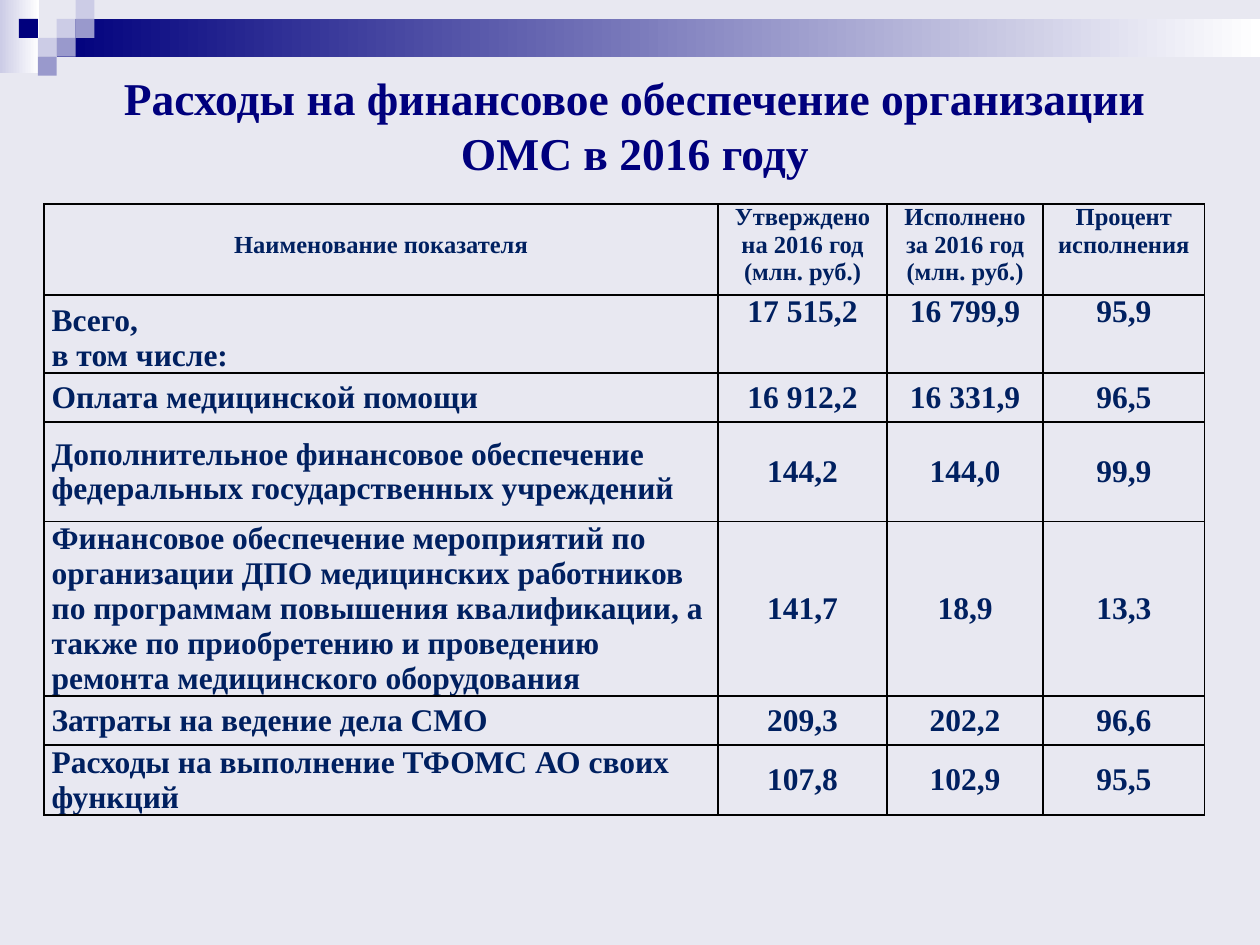
from lxml.etree import SubElement
from pptx import Presentation
from pptx.dml.color import RGBColor
from pptx.enum.shapes import MSO_SHAPE as Shape
from pptx.enum.text import MSO_ANCHOR as Anchor, PP_ALIGN as Align
from pptx.oxml.ns import qn
from pptx.util import Inches, Pt

COLORS = {
    "background": "E8E8F1", "navy": "00007D", "lilac": "CCCCE6", "violet": "9999CC",
    "white": "FFFFFF", "text": "002060", "border": "000000",
}
FONT = "Times New Roman"
TILE = 0.15
# Colour, column and row of each tile in the corner mosaic
TILES = [
    ("lilac", 3, 1), ("lilac", 4, 0), ("violet", 4, 1), ("lilac", 2, 2),
    ("navy", 1, 1), ("violet", 3, 2), ("violet", 2, 3),
]
COLUMN_WIDTHS = [5.35, 1.34, 1.24, 1.28]
ROW_HEIGHTS = [0.72, 0.62, 0.39, 0.79, 1.38, 0.39, 0.55]
ROWS = [
    ["Наименование показателя", "Утверждено\nна 2016 год\n(млн. руб.)",
     "Исполнено\nза 2016 год\n(млн. руб.)", "Процент исполнения"],
    ["Всего,\nв том числе:", "17 515,2", "16 799,9", "95,9"],
    ["Оплата медицинской помощи", "16 912,2", "16 331,9", "96,5"],
    ["Дополнительное финансовое обеспечение федеральных государственных учреждений",
     "144,2", "144,0", "99,9"],
    ["Финансовое обеспечение мероприятий по организации ДПО медицинских работников "
     "по программам повышения квалификации, а также по приобретению и проведению "
     "ремонта медицинского оборудования", "141,7", "18,9", "13,3"],
    ["Затраты на ведение дела СМО", "209,3", "202,2", "96,6"],
    ["Расходы на выполнение ТФОМС АО своих функций", "107,8", "102,9", "95,5"],
]


def rgb(name):
    return RGBColor.from_string(COLORS[name])


class PageBuilder:
    """Holds the text style and the page being built."""

    def __init__(self, page):
        self.page = page
        fill = page.background.fill
        fill.solid()
        fill.fore_color.rgb = rgb("background")

    def style(self, frame, size, color, align):
        for para in frame.paragraphs:
            para.alignment = align
            for span in para.runs:
                span.font.name = FONT
                span.font.size = Pt(size)
                span.font.bold = True
                span.font.color.rgb = rgb(color)

    def box(self, left, top, width, height, *colors):
        """Add a borderless rectangle: one colour is solid, two make a gradient."""
        box = self.page.shapes.add_shape(
            Shape.RECTANGLE, Inches(left), Inches(top), Inches(width), Inches(height))
        box.shadow.inherit = False
        box.line.fill.background()
        if len(colors) == 1:
            box.fill.solid()
            box.fill.fore_color.rgb = rgb(colors[0])
        else:
            box.fill.gradient()
            box.fill.gradient_angle = 0
            for stop, color in zip(box.fill.gradient_stops, colors):
                stop.color.rgb = rgb(color)

    def title(self, text, left, top, width, height):
        title = self.page.shapes.title
        title.left, title.top = Inches(left), Inches(top)
        title.width, title.height = Inches(width), Inches(height)
        title.text_frame.text = text
        title.text_frame.vertical_anchor = Anchor.MIDDLE
        self.style(title.text_frame, 26, "navy", Align.CENTER)

    def borders(self, cell):
        properties = cell._tc.get_or_add_tcPr()
        for side in ("a:lnL", "a:lnR", "a:lnT", "a:lnB"):
            line = SubElement(properties, qn(side), w=str(Pt(1)))
            fill = SubElement(line, qn("a:solidFill"))
            SubElement(fill, qn("a:srgbClr"), val=COLORS["border"])

    def table(self, rows, left, top, widths, heights):
        table = self.page.shapes.add_table(
            len(rows), len(widths), Inches(left), Inches(top),
            Inches(sum(widths)), Inches(sum(heights))).table
        table.first_row = table.horz_banding = False
        for column, width in zip(table.columns, widths):
            column.width = Inches(width)
        for row, height in zip(table.rows, heights):
            row.height = Inches(height)
        for r, texts in enumerate(rows):
            for c, text in enumerate(texts):
                cell = table.cell(r, c)
                cell.text_frame.text = text
                cell.margin_left = cell.margin_right = Inches(0.06)
                cell.margin_top = cell.margin_bottom = 0
                cell.vertical_anchor = Anchor.TOP if r < 2 else Anchor.MIDDLE
                align = Align.LEFT if r and not c else Align.CENTER
                self.style(cell.text_frame, 18 if r else 14, "text", align)
                self.borders(cell)
                cell.fill.background()
        table.cell(0, 0).margin_top = Inches(0.22)
        table.cell(1, 0).vertical_anchor = Anchor.BOTTOM


def main():
    deck = Presentation()
    deck.slide_width, deck.slide_height = Inches(10), Inches(7.5)
    builder = PageBuilder(deck.slides.add_slide(deck.slide_layouts[5]))
    builder.box(0, 0, 0.31, 0.58, "lilac", "white")
    builder.box(0.45, 0.15, 9.55, 0.3, "navy", "white")
    for color, column, row in TILES:
        builder.box(column * TILE, row * TILE, TILE, TILE, color)
    builder.title("Расходы на финансовое обеспечение организации ОМС в 2016 году",
                  0.67, 0.52, 8.74, 0.94)
    builder.table(ROWS, 0.35, 1.62, COLUMN_WIDTHS, ROW_HEIGHTS)
    deck.save("out.pptx")


if __name__ == "__main__":
    main()
